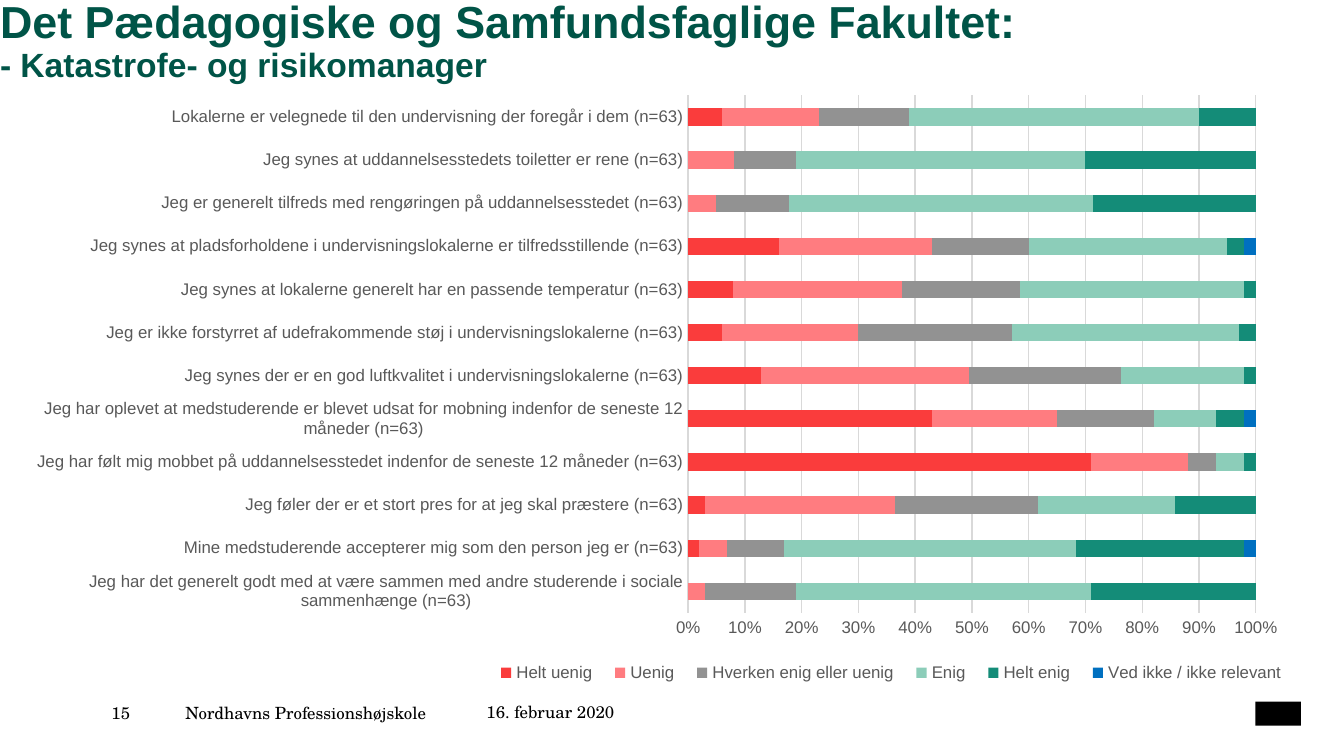
import pptx
import pptx.chart.data
import pptx.dml.color
import pptx.enum.chart
import pptx.enum.shapes
import pptx.enum.text
import pptx.oxml
import pptx.oxml.ns
import pptx.util

Inches = pptx.util.Inches
Pt = pptx.util.Pt
RGBColor = pptx.dml.color.RGBColor
qn = pptx.oxml.ns.qn

DARK_GREEN = RGBColor(0x00, 0x54, 0x47)
BLACK = RGBColor(0x00, 0x00, 0x00)
TEXT_GREY = RGBColor(0x59, 0x59, 0x59)
LINE_GREY = RGBColor(0xD9, 0xD9, 0xD9)
RED = RGBColor(0xFA, 0x3C, 0x3C)
PINK = RGBColor(0xFF, 0x7C, 0x80)
GREY = RGBColor(0x92, 0x92, 0x92)
MINT = RGBColor(0x8C, 0xCD, 0xB9)
GREEN = RGBColor(0x14, 0x8C, 0x78)
BLUE = RGBColor(0x00, 0x70, 0xC0)

SANS = "Arial"
SERIF = "TeX Gyre Schola"

# Questions from the bottom of the chart upwards
QUESTIONS = [
    "Jeg har det generelt godt med at være sammen med andre studerende i sociale sammenhænge",
    "Mine medstuderende accepterer mig som den person jeg er",
    "Jeg føler der er et stort pres for at jeg skal præstere",
    "Jeg har følt mig mobbet på uddannelsesstedet indenfor de seneste 12 måneder",
    "Jeg har oplevet at medstuderende er blevet udsat for mobning indenfor de seneste 12 måneder",
    "Jeg synes der er en god luftkvalitet i undervisningslokalerne",
    "Jeg er ikke forstyrret af udefrakommende støj i undervisningslokalerne",
    "Jeg synes at lokalerne generelt har en passende temperatur",
    "Jeg synes at pladsforholdene i undervisningslokalerne er tilfredsstillende",
    "Jeg er generelt tilfreds med rengøringen på uddannelsesstedet",
    "Jeg synes at uddannelsesstedets toiletter er rene",
    "Lokalerne er velegnede til den undervisning der foregår i dem",
]
ANSWERS = [
    ("Helt uenig", RED, [None, 2, 3, 71, 43, 13, 6, 8, 16, None, None, 6]),
    ("Uenig", PINK, [3, 5, 33, 17, 22, 37, 24, 30, 27, 5, 8, 17]),
    ("Hverken enig eller uenig", GREY, [16, 10, 25, 5, 17, 27, 27, 21, 17, 13, 11, 16]),
    ("Enig", MINT, [52, 52, 24, 5, 11, 22, 40, 40, 35, 54, 51, 51]),
    ("Helt enig", GREEN, [29, 30, 14, 2, 5, 2, 3, 2, 3, 29, 30, 10]),
    ("Ved ikke / ikke relevant", BLUE, [None, 2, None, None, 2] + [None] * 3 + [2] + [None] * 3),
]


def set_font(font, name, size, color, bold=False):
    font.name, font.size, font.bold = name, Pt(size), bold
    font.color.rgb = color


def clear_frame(tf):
    tf.margin_left = tf.margin_top = tf.margin_right = tf.margin_bottom = 0
    tf.vertical_anchor = pptx.enum.text.MSO_ANCHOR.TOP
    tf.auto_size = pptx.enum.text.MSO_AUTO_SIZE.NONE
    tf.word_wrap = True


def add_title(s, left, top, width, height):
    sp = s.shapes.title
    sp.left, sp.top, sp.width, sp.height = (Inches(v) for v in (left, top, width, height))
    tf = sp.text_frame
    clear_frame(tf)
    p = tf.paragraphs[0]
    p.alignment = pptx.enum.text.PP_ALIGN.LEFT
    p.line_spacing = 0.9
    lines = [("Det Pædagogiske og Samfundsfaglige Fakultet:", 24),
             ("- Katastrofe- og risikomanager", 18)]
    for i, (text, size) in enumerate(lines):
        if i:
            p.add_line_break()
        r = p.add_run()
        r.text = text
        set_font(r.font, SANS, size, DARK_GREEN, bold=True)


def set_layout(parent, index, x, y, w, h, target=""):
    """Fix a chart part at fractions of the chart's width and height."""
    for old in parent.findall(qn("c:layout")):
        parent.remove(old)
    sizes = "".join(f'<c:{k} val="{v}"/>' for k, v in zip("xywh", (x, y, w, h)))
    parent.insert(index, pptx.oxml.parse_xml(
        f'<c:layout {pptx.oxml.ns.nsdecls("c")}><c:manualLayout>{target}'
        f'<c:xMode val="edge"/><c:yMode val="edge"/>{sizes}</c:manualLayout></c:layout>'))


def add_answer_chart(s, left, top, width, height):
    data = pptx.chart.data.CategoryChartData()
    data.categories = [f"{question} (n=63)" for question in QUESTIONS]
    for name, _, values in ANSWERS:
        data.add_series(name, values)
    chart = s.shapes.add_chart(
        pptx.enum.chart.XL_CHART_TYPE.BAR_STACKED_100,
        Inches(left), Inches(top), Inches(width), Inches(height), data).chart
    set_font(chart.font, SANS, 10, BLACK)
    chart.has_title = False

    # Bars
    plot = chart.plots[0]
    plot.gap_width, plot.overlap = 150, 100
    plot.vary_by_categories = False
    for series, (_, color, _) in zip(plot.series, ANSWERS):
        series.format.fill.solid()
        series.format.fill.fore_color.rgb = color

    # Axes
    cat_axis, val_axis = chart.category_axis, chart.value_axis
    for axis in (cat_axis, val_axis):
        axis.major_tick_mark = axis.minor_tick_mark = pptx.enum.chart.XL_TICK_MARK.NONE
        set_font(axis.tick_labels.font, SANS, 9, TEXT_GREY)
    val_axis.has_major_gridlines = True
    for line in (cat_axis.format.line, val_axis.major_gridlines.format.line):
        line.color.rgb = LINE_GREY
        line.width = Pt(0.75)
    val_axis.format.line.fill.background()
    val_axis.minimum_scale, val_axis.maximum_scale, val_axis.major_unit = 0, 1, 0.1
    val_axis.tick_labels.number_format = "0%"
    val_axis.tick_labels.number_format_is_linked = False

    # Legend
    chart.has_legend = True
    legend = chart.legend
    legend.position = pptx.enum.chart.XL_LEGEND_POSITION.BOTTOM
    legend.include_in_layout = False
    set_font(legend.font, SANS, 9, TEXT_GREY)

    # Places of the bars and the legend; the legend's position tag precedes its layout
    root = chart.element
    set_layout(root.find(".//" + qn("c:plotArea")), 0, 0.524, 0.02, 0.439, 0.852,
               '<c:layoutTarget val="inner"/>')
    set_layout(root.find(".//" + qn("c:legend")), 1, 0.366, 0.943, 0.63, 0.055)


def add_footer(s, left, top, width, height):
    # Page number, school and date
    items = [("15", 0, 0.01, 0.46),
             ("Nordhavns Professionshøjskole", 0.55, 0.01, 2.08),
             ("16. februar 2020", 2.79, 0, 2.8)]
    for text, dx, dy, w in items:
        sp = s.shapes.add_textbox(Inches(left + dx), Inches(top + dy), Inches(w), Inches(0.15))
        clear_frame(sp.text_frame)
        p = sp.text_frame.paragraphs[0]
        p.text = text
        set_font(p.font, SERIF, 9, BLACK)
    # Plain mark at the right end
    mark_width = 0.34
    mark = s.shapes.add_shape(
        pptx.enum.shapes.MSO_SHAPE.RECTANGLE, Inches(left + width - mark_width),
        Inches(top), Inches(mark_width), Inches(height))
    mark.shadow.inherit = False
    mark.fill.solid()
    mark.fill.fore_color.rgb = BLACK
    mark.line.fill.background()


def main():
    prs = pptx.Presentation()
    # Widescreen, 16:9
    prs.slide_width = Inches(10)
    prs.slide_height = prs.slide_width * 9 // 16
    s = prs.slides.add_slide(prs.slide_layouts[5])
    add_title(s, 0, 0, 8.19, 1.08)
    add_answer_chart(s, 0.08, 0.62, 9.62, 4.52)
    add_footer(s, 0.83, 5.22, 8.85, 0.18)
    prs.save("out.pptx")


if __name__ == "__main__":
    main()
